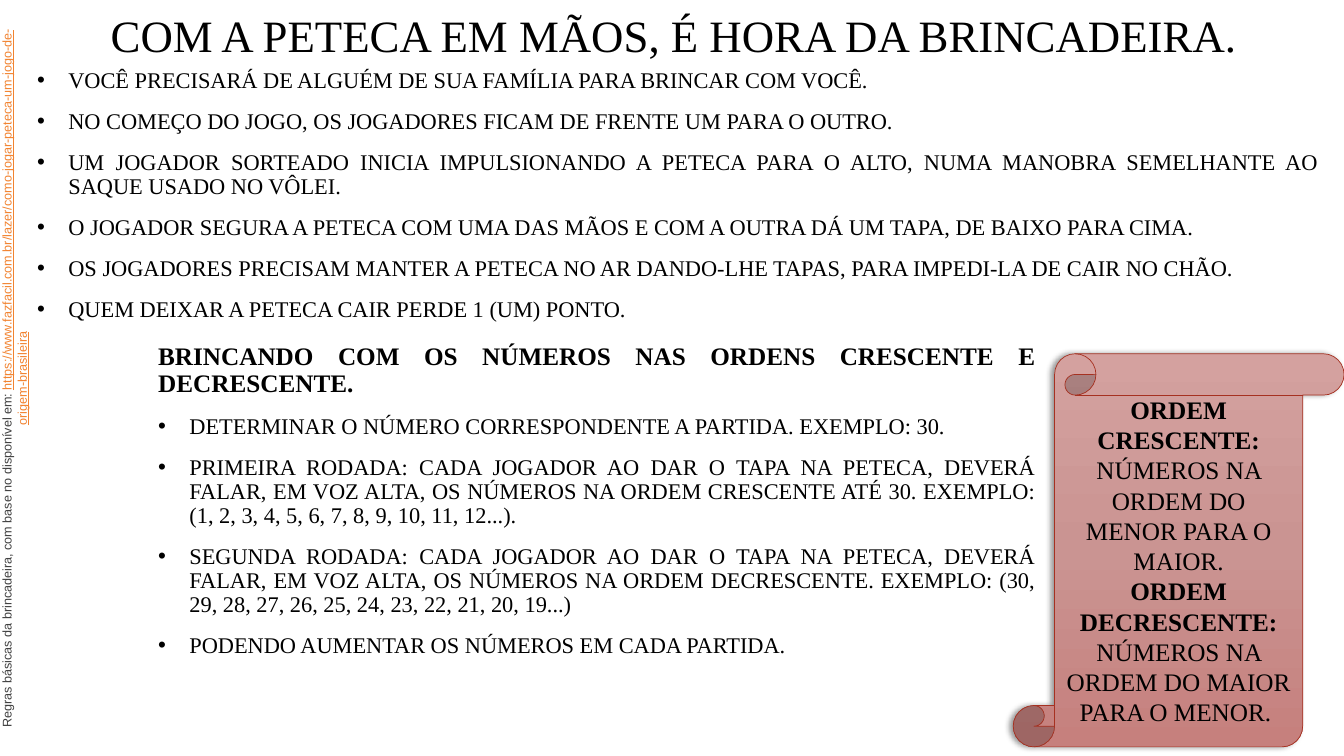
from lxml.etree import SubElement
from pptx import Presentation
from pptx.dml.color import RGBColor
from pptx.enum.shapes import MSO_SHAPE
from pptx.enum.text import MSO_ANCHOR, PP_ALIGN
from pptx.oxml.ns import qn
from pptx.util import Inches, Pt

deck = Presentation()
deck.slide_width = Inches(13.33)
deck.slide_height = Inches(7.5)
page = deck.slides.add_slide(deck.slide_layouts[6])


def hex_color(value):
    return RGBColor.from_string(value)


def place(left, top, width, height):
    return [int(share * side / 100) for share, side in
            ((left, deck.slide_width), (top, deck.slide_height),
             (width, deck.slide_width), (height, deck.slide_height))]


TITLE = {"name": "Times New Roman", "size": Pt(32)}
RULE = {"name": "Times New Roman", "size": Pt(16)}
PLAIN = {"name": "Times New Roman", "size": Pt(18), "bold": False}
STRONG = PLAIN | {"bold": True}
CREDIT = {"name": "Arial", "size": Pt(9)}
ADDRESS = CREDIT | {"underline": True}
BLACK, GREY, ORANGE = "000000", "404040", "F28330"

LEFT = {"alignment": PP_ALIGN.LEFT, "line_spacing": 0.9}
JUSTIFIED = {"alignment": PP_ALIGN.JUSTIFY, "line_spacing": 0.9}
CENTERED = {"alignment": PP_ALIGN.CENTER}

game_rules = [
    "VOCÊ PRECISARÁ DE ALGUÉM DE SUA FAMÍLIA PARA BRINCAR COM VOCÊ.",
    "NO COMEÇO DO JOGO, OS JOGADORES FICAM DE FRENTE UM PARA O OUTRO.",
    "UM JOGADOR SORTEADO INICIA IMPULSIONANDO A PETECA PARA O ALTO, "
    "NUMA MANOBRA SEMELHANTE AO SAQUE USADO NO VÔLEI.",
    "O JOGADOR SEGURA A PETECA COM UMA DAS MÃOS E COM A OUTRA DÁ UM TAPA, "
    "DE BAIXO PARA CIMA. ",
    "OS JOGADORES PRECISAM MANTER A PETECA NO AR DANDO-LHE TAPAS, "
    "PARA IMPEDI-LA DE CAIR NO CHÃO.",
    "QUEM DEIXAR A PETECA CAIR PERDE 1 (UM) PONTO.",
]
number_rules = [
    "DETERMINAR O NÚMERO CORRESPONDENTE A PARTIDA. EXEMPLO: 30.",
    "PRIMEIRA RODADA: CADA JOGADOR AO DAR O TAPA NA PETECA, DEVERÁ FALAR, "
    "EM VOZ ALTA, OS NÚMEROS NA ORDEM CRESCENTE ATÉ 30. EXEMPLO: "
    "(1, 2, 3, 4, 5, 6, 7, 8, 9, 10, 11, 12...).",
    "SEGUNDA RODADA: CADA JOGADOR AO DAR O TAPA NA PETECA, DEVERÁ FALAR, "
    "EM VOZ ALTA, OS NÚMEROS NA ORDEM DECRESCENTE. EXEMPLO: "
    "(30, 29, 28, 27, 26, 25, 24, 23, 22, 21, 20, 19...)",
    "PODENDO AUMENTAR OS NÚMEROS EM CADA PARTIDA. ",
]

title = page.shapes.add_textbox(*place(7.5, 0, 89.2, 8.93))
game = page.shapes.add_textbox(*place(2.03, 8.53, 96.85, 41.47))
numbers = page.shapes.add_textbox(*place(11.03, 44.8, 66.77, 44.93))

credit = page.shapes.add_shape(MSO_SHAPE.RECTANGLE, *place(-27.08, 48.13, 56.26, 3.87))
credit.rotation = 270
credit.shadow.inherit = False
credit.fill.solid()
credit.fill.fore_color.rgb = hex_color("FFFFFF")
credit.line.fill.background()

scroll = page.shapes.add_shape(MSO_SHAPE.VERTICAL_SCROLL, *place(75.39, 46.8, 24.61, 52))
scroll.line.color.rgb = hex_color("A63121")
scroll.line.width = Pt(0.5)
scroll.fill.gradient()
scroll.fill.gradient_angle = 270
stops = scroll._element.spPr.find(".//" + qn("a:gsLst"))
for stop in list(stops):
    stops.remove(stop)
for percent, color in ((0, "D4A19F"), (50, "CA9492"), (100, "C6807D")):
    stop = SubElement(stops, qn("a:gs"), pos=str(percent * 1000))
    SubElement(stop, qn("a:srgbClr"), val=color)
scroll.shadow.inherit = False
effects = scroll._element.spPr.find(qn("a:effectLst"))
shadow = SubElement(effects, qn("a:outerShdw"), blurRad=str(Pt(4)), dist=str(Pt(3)),
                    dir="10800000", algn="ctr", rotWithShape="0")
shade = SubElement(shadow, qn("a:srgbClr"), val=BLACK)
SubElement(shade, qn("a:alpha"), val="40000")

contents = [
    (title, MSO_ANCHOR.BOTTOM, LEFT, 0, [
        (False, [("COM A PETECA EM MÃOS, É HORA DA BRINCADEIRA.", TITLE, BLACK)])]),
    (game, MSO_ANCHOR.TOP, JUSTIFIED, 12,
     [(True, [(rule, RULE, BLACK)]) for rule in game_rules]),
    (numbers, MSO_ANCHOR.TOP, JUSTIFIED, 12, [
        (False, [("BRINCANDO COM OS NÚMEROS NAS ORDENS CRESCENTE E DECRESCENTE.",
                  STRONG, BLACK)]),
        *[(True, [(rule, RULE, BLACK)]) for rule in number_rules]]),
    (credit, MSO_ANCHOR.MIDDLE, CENTERED, 0, [
        (False, [("Regras básicas da brincadeira, com base no disponível em: ", CREDIT, GREY),
                 ("https://www.fazfacil.com.br/lazer/"
                  "como-jogar-peteca-um-jogo-de-origem-brasileira", ADDRESS, ORANGE)])]),
    (scroll, MSO_ANCHOR.MIDDLE, CENTERED, 0, [
        (False, [("ORDEM CRESCENTE: ", STRONG, BLACK),
                 ("NÚMEROS NA ORDEM DO MENOR PARA O MAIOR.", PLAIN, BLACK)]),
        (False, [("ORDEM DECRESCENTE: ", STRONG, BLACK),
                 ("NÚMEROS NA ORDEM DO MAIOR PARA O MENOR. ", PLAIN, BLACK)])]),
]

for box, anchor, layout, gap, paragraphs in contents:
    frame = box.text_frame
    frame.word_wrap = True
    frame.vertical_anchor = anchor
    for index, (bulleted, spans) in enumerate(paragraphs):
        para = frame.add_paragraph() if index else frame.paragraphs[0]
        if bulleted:
            properties = para._p.get_or_add_pPr()
            properties.set("marL", str(Inches(0.31)))
            properties.set("indent", str(Inches(-0.31)))
            SubElement(properties, qn("a:buFont"), typeface="Arial")
            SubElement(properties, qn("a:buChar"), char="•")
        for name, value in layout.items():
            setattr(para, name, value)
        para.space_before = Pt(gap if index else 0)
        for text, style, color in spans:
            span = para.add_run()
            span.text = text
            for name, value in style.items():
                setattr(span.font, name, value)
            span.font.color.rgb = hex_color(color)

deck.save("out.pptx")
